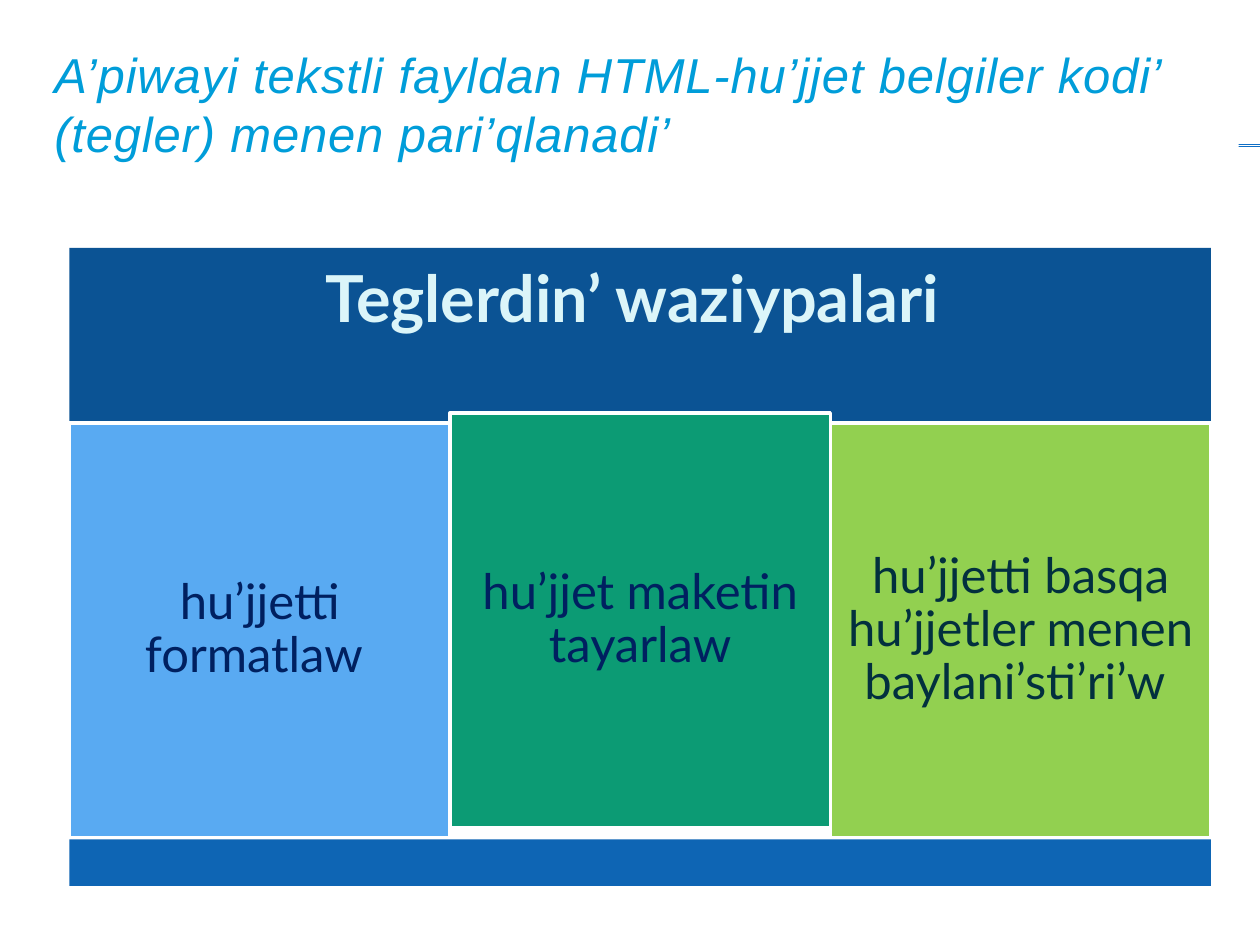
from pptx import Presentation
from pptx.dml.color import RGBColor
from pptx.enum.shapes import MSO_CONNECTOR, MSO_SHAPE
from pptx.enum.text import MSO_ANCHOR as ANCHOR, MSO_AUTO_SIZE, PP_ALIGN as ALIGN
from pptx.oxml.ns import qn
from pptx.util import Cm, Pt
from lxml import etree


def rgb(value):
    return RGBColor.from_string(value)


class Deck:
    """Holds the style and the current slide."""
    title_font, body_font = "Arial", "Lato"
    white, rule_color = "FFFFFF", "0F6FC6"

    def __init__(self, prs):
        self.s = prs.slides.add_slide(prs.slide_layouts[5])

    def format_run(self, r, font, size, color, bold=False, italic=False):
        r.font.name, r.font.size = font, Pt(size)
        r.font.bold, r.font.italic = bold, italic
        r.font.color.rgb = rgb(color)

    def title(self, text, x, y, w, h):
        sp = self.s.shapes.title
        sp.left, sp.top, sp.width, sp.height = Cm(x), Cm(y), Cm(w), Cm(h)
        sp.fill.solid()
        sp.fill.fore_color.rgb = rgb(self.white)
        tf = sp.text_frame
        tf.text = text
        tf.word_wrap, tf.auto_size = True, MSO_AUTO_SIZE.NONE
        tf.vertical_anchor = ANCHOR.MIDDLE
        p = tf.paragraphs[0]
        p.alignment = ALIGN.LEFT
        r = p.runs[0]
        self.format_run(r, self.title_font, 28, "009DD9", italic=True)
        r.font._element.set("spc", "50")

    def rule(self, x1, x2, y):
        """A horizontal line that runs behind the title."""
        line = self.s.shapes.add_connector(
            MSO_CONNECTOR.STRAIGHT, Cm(x1), Cm(y), Cm(x2), Cm(y))
        line.line.color.rgb = rgb(self.rule_color)
        line.line.width = Pt(0.75)
        etree.SubElement(line._element.spPr, qn("a:effectLst"))
        self.s.shapes.title._element.addprevious(line._element)

    def block(self, x, y, w, h, fill, outlined=False):
        sp = self.s.shapes.add_shape(
            MSO_SHAPE.RECTANGLE, Cm(x), Cm(y), Cm(w), Cm(h))
        sp.shadow.inherit = False
        sp.fill.solid()
        sp.fill.fore_color.rgb = rgb(fill)
        if outlined:
            sp.line.color.rgb = rgb(self.white)
            sp.line.width = Pt(2)
        else:
            sp.line.fill.background()
        return sp

    def label(self, sp, text, size, color, inset, bold=False,
              anchor=ANCHOR.MIDDLE):
        tf = sp.text_frame
        tf.text = text
        tf.word_wrap, tf.vertical_anchor = True, anchor
        tf.margin_left = tf.margin_right = Cm(inset)
        tf.margin_top = tf.margin_bottom = Cm(inset)
        p = tf.paragraphs[0]
        p.alignment, p.line_spacing = ALIGN.CENTER, 0.9
        self.format_run(p.runs[0], self.body_font, size, color, bold)


def main():
    prs = Presentation()
    prs.slide_width, prs.slide_height = Cm(25.4), Cm(19.05)
    deck = Deck(prs)

    # Title with the double rule behind it
    deck.title("A’piwayi tekstli fayldan HTML-hu’jjet belgiler kodi’ "
               "(tegler) menen pari’qlanadi’", 0.84, 0.58, 24.13, 3)
    for y in (2.92, 2.95):
        deck.rule(1.42, 25.4, y)

    # Header band
    left, width = 1.4, 23.01
    header = deck.block(left, 5, width, 3.99, "0B5394")
    deck.label(header, "Teglerdin’ waziypalari ", 37, "DBF5F9", 0.38,
               bold=True, anchor=ANCHOR.TOP)

    # Three columns, the middle one raised
    columns = [
        ("hu’jjetti formatlaw ", 8.53, "59AAF2", "002060"),
        ("hu’jjet maketin tayarlaw", 8.33, "0C9B74", "002060"),
        ("hu’jjetti basqa hu’jjetler menen baylani’sti’ri’w ", 8.53,
         "92D050", "02303E"),
    ]
    col_w = width / len(columns)
    for i, (text, top, fill, color) in enumerate(columns):
        column = deck.block(left + i * col_w, top, col_w, 8.36, fill, True)
        deck.label(column, text, 28, color, 0.3)

    # Footer band
    deck.block(left, 16.92, width, 0.94, "0E65B4")

    prs.save("out.pptx")


if __name__ == "__main__":
    main()
